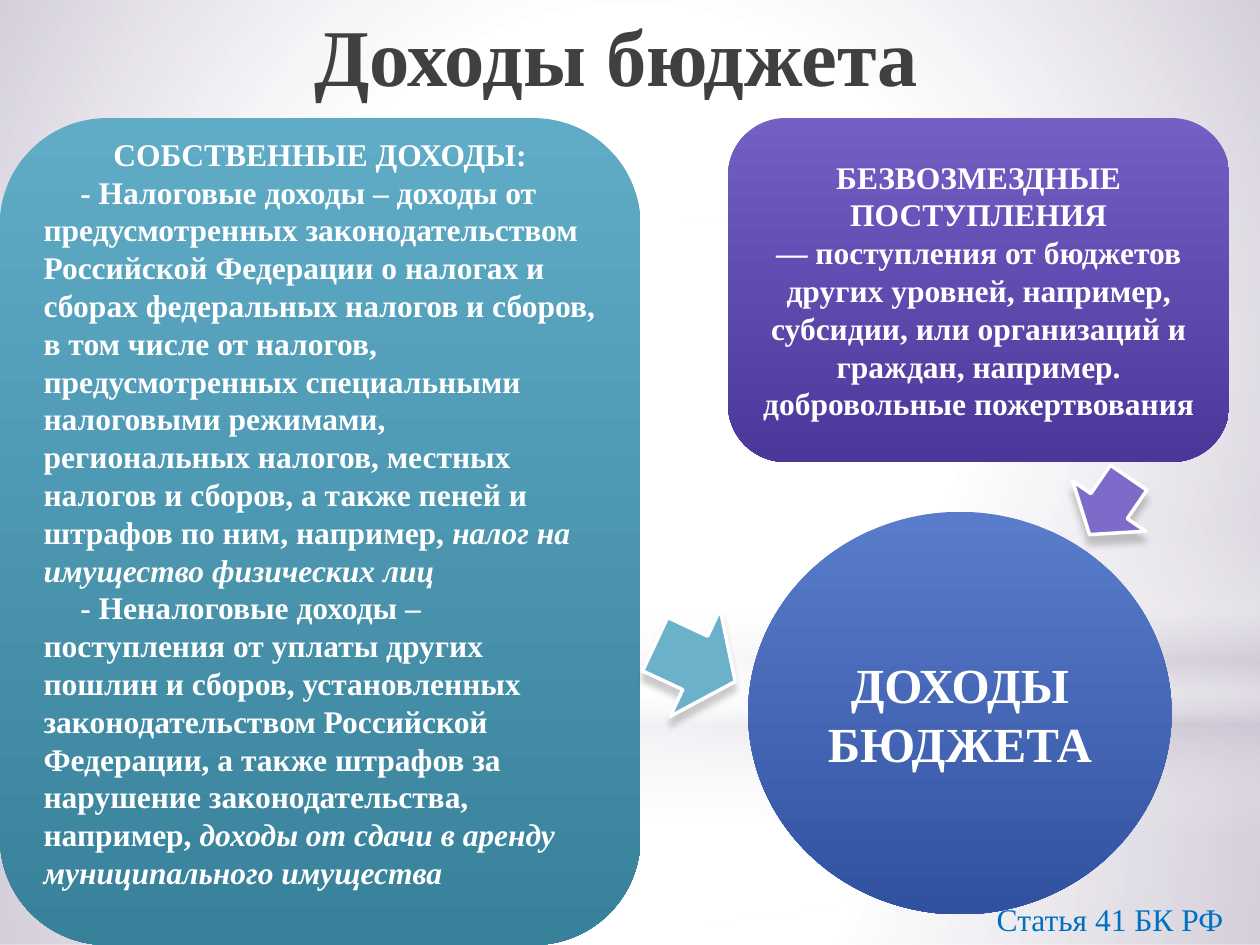
from dataclasses import dataclass

from lxml import etree
from pptx import Presentation
from pptx.dml.color import RGBColor
from pptx.enum.shapes import MSO_SHAPE
from pptx.enum.text import MSO_ANCHOR, PP_ALIGN
from pptx.oxml.ns import qn
from pptx.util import Pt

RECT, ROUND_RECT = MSO_SHAPE.RECTANGLE, MSO_SHAPE.ROUNDED_RECTANGLE
OVAL, DOWN_ARROW = MSO_SHAPE.OVAL, MSO_SHAPE.DOWN_ARROW
MIDDLE, CENTER, LEFT = MSO_ANCHOR.MIDDLE, PP_ALIGN.CENTER, PP_ALIGN.LEFT
TITLE_ONLY = 5


@dataclass(frozen=True)
class Theme:
    font: str = "Times New Roman"
    title_size: int = 46
    circle_size: int = 28
    body_size: int = 18
    title: str = "404040"
    white: str = "FFFFFF"
    haze: str = "C9C2D1"
    shadow: str = "000000"
    citation: str = "0070C0"
    teal: tuple = ("60ABC5", "37819A")
    violet: tuple = ("7460C5", "4B379A")
    blue: tuple = ("597CCB", "3152A0")
    teal_arrow: str = "6BB1C9"
    violet_arrow: str = "7E6BC9"


THEME = Theme()

OWN_INCOME = [
    ("\t- Налоговые доходы – доходы от предусмотренных законодательством Российской "
     "Федерации о налогах и сборах\u00a0федеральных налогов и сборов, в том числе от налогов, "
     "предусмотренных специальными налоговыми\u00a0режимами, региональных налогов, местных "
     "налогов и сборов, а также пеней и штрафов по ним, например, ",
     "налог на имущество физических лиц"),
    ("\t- Неналоговые доходы – поступления от уплаты других пошлин и сборов, установленных "
     "законодательством Российской Федерации, а также штрафов за нарушение "
     "законодательства, например, ",
     "доходы от сдачи в аренду муниципального имущества"),
]
GRANTS = [
    "БЕЗВОЗМЕЗДНЫЕ",
    "ПОСТУПЛЕНИЯ",
    "— поступления от бюджетов других уровней, например, субсидии, или организаций "
    "и граждан, например. добровольные пожертвования",
]


def add_color(parent, color, alpha=100):
    node = etree.SubElement(parent, qn("a:srgbClr"), val=color)
    if alpha < 100:
        etree.SubElement(node, qn("a:alpha"), val=str(alpha * 1000))


def add_plain_shape(slide, preset, box):
    shape = slide.shapes.add_shape(preset, *map(Pt, box))
    shape.shadow.inherit = False
    shape.line.fill.background()
    return shape


def fill_gradient(shape, stops, radial=False):
    """Fill with (position, color, alpha) stops, downwards or from the centre."""
    gradient = etree.Element(qn("a:gradFill"), rotWithShape="1")
    stop_list = etree.SubElement(gradient, qn("a:gsLst"))
    for position, color, alpha in stops:
        stop = etree.SubElement(stop_list, qn("a:gs"), pos=str(position * 1000))
        add_color(stop, color, alpha)
    if radial:
        path = etree.SubElement(gradient, qn("a:path"), path="circle")
        etree.SubElement(path, qn("a:fillToRect"), l="50000", t="50000", r="50000", b="50000")
    else:
        etree.SubElement(gradient, qn("a:lin"), ang="5400000", scaled="0")
    shape.fill.background()
    properties = shape.element.spPr
    properties.replace(properties.find(qn("a:noFill")), gradient)


def format_paragraph(paragraph, size, color, bold=True, align=CENTER):
    paragraph.alignment = align
    paragraph.font.name = THEME.font
    paragraph.font.size = Pt(size)
    paragraph.font.bold = bold
    paragraph.font.color.rgb = RGBColor.from_string(color)


def add_tab_stop(paragraph, position):
    tabs = etree.SubElement(paragraph._p.get_or_add_pPr(), qn("a:tabLst"))
    etree.SubElement(tabs, qn("a:tab"), pos=str(Pt(position)), algn="l")


def add_backdrop(slide, box):
    left, top, width, height = box
    white, haze = THEME.white, THEME.haze
    horizon = 402
    layers = [
        (RECT, horizon, height - horizon, True,
         [(0, white, 91), (37, white, 76), (100, haze, 79)]),
        (RECT, 0, horizon, True, [(0, white, 89), (48, white, 62), (100, haze, 79)]),
        (RECT, 297, 180, False,
         [(0, white, 0), (29, white, 30), (45, haze, 40), (55, white, 26),
          (65, haze, 60), (100, white, 0)]),
        (OVAL, 126, horizon, True, [(0, white, 100), (56, white, 0)]),
    ]
    for preset, offset, depth, radial, stops in layers:
        layer = add_plain_shape(slide, preset, (left, top + offset, width, depth))
        fill_gradient(layer, stops, radial)


def add_title(slide, box):
    title = slide.shapes.title
    title.left, title.top, title.width, title.height = map(Pt, box)
    title.element.getparent().append(title.element)
    title.text_frame.text = "Доходы бюджета"
    title.text_frame.vertical_anchor = MSO_ANCHOR.TOP
    format_paragraph(title.text_frame.paragraphs[0], THEME.title_size, THEME.title)


def add_panel(slide, preset, box, colors, lines, size=THEME.body_size):
    panel = add_plain_shape(slide, preset, box)
    fill_gradient(panel, [(0, colors[0], 100), (100, colors[1], 100)])
    frame = panel.text_frame
    frame.word_wrap = True
    frame.vertical_anchor = MIDDLE
    frame.text = "\n".join(lines)
    for paragraph in frame.paragraphs:
        format_paragraph(paragraph, size, THEME.white)
    return frame


def add_own_income(slide, box):
    frame = add_panel(slide, ROUND_RECT, box, THEME.teal, ["СОБСТВЕННЫЕ ДОХОДЫ:"])
    frame.margin_bottom = Pt(25)
    for definition, example in OWN_INCOME:
        paragraph = frame.add_paragraph()
        add_tab_stop(paragraph, 21)
        format_paragraph(paragraph, THEME.body_size, THEME.white, align=LEFT)
        paragraph.add_run().text = definition
        example_run = paragraph.add_run()
        example_run.text = example
        example_run.font.italic = True


def add_arrow(slide, box, rotation, color):
    arrow = add_plain_shape(slide, DOWN_ARROW, box)
    arrow.rotation = rotation
    arrow.fill.solid()
    arrow.fill.fore_color.rgb = RGBColor.from_string(color)
    arrow.line.color.rgb = RGBColor.from_string(THEME.white)
    arrow.line.width = Pt(2)
    effects = arrow.element.spPr.find(qn("a:effectLst"))
    shadow = etree.SubElement(effects, qn("a:outerShdw"), blurRad=str(Pt(4)), dist=str(Pt(5)),
                              dir="5400000", rotWithShape="0")
    add_color(shadow, THEME.shadow, 20)


def add_citation(slide, box):
    frame = slide.shapes.add_textbox(*map(Pt, box)).text_frame
    frame.word_wrap = True
    frame.text = "Статья 41 БК РФ"
    format_paragraph(frame.paragraphs[0], THEME.body_size, THEME.citation, False, LEFT)


def main():
    deck = Presentation()
    deck.slide_width, deck.slide_height = Pt(720), Pt(540)
    slide = deck.slides.add_slide(deck.slide_layouts[TITLE_ONLY])
    add_backdrop(slide, (0, 0, 720, 540))
    add_own_income(slide, (0, 67.5, 366, 472.5))
    add_title(slide, (96, 0, 512, 78))
    add_panel(slide, ROUND_RECT, (416, 67.5, 286.5, 196.5), THEME.violet, GRANTS)
    add_panel(slide, OVAL, (427.5, 292.5, 242, 230), THEME.blue, ["ДОХОДЫ БЮДЖЕТА"],
              THEME.circle_size)
    add_arrow(slide, (363.5, 353.5, 67.5, 50.5), 295, THEME.teal_arrow)
    add_arrow(slide, (608.5, 269.5, 50.5, 39.5), 34.5, THEME.violet_arrow)
    add_citation(slide, (562.5, 511, 157.5, 29))
    deck.save("out.pptx")


if __name__ == "__main__":
    main()
